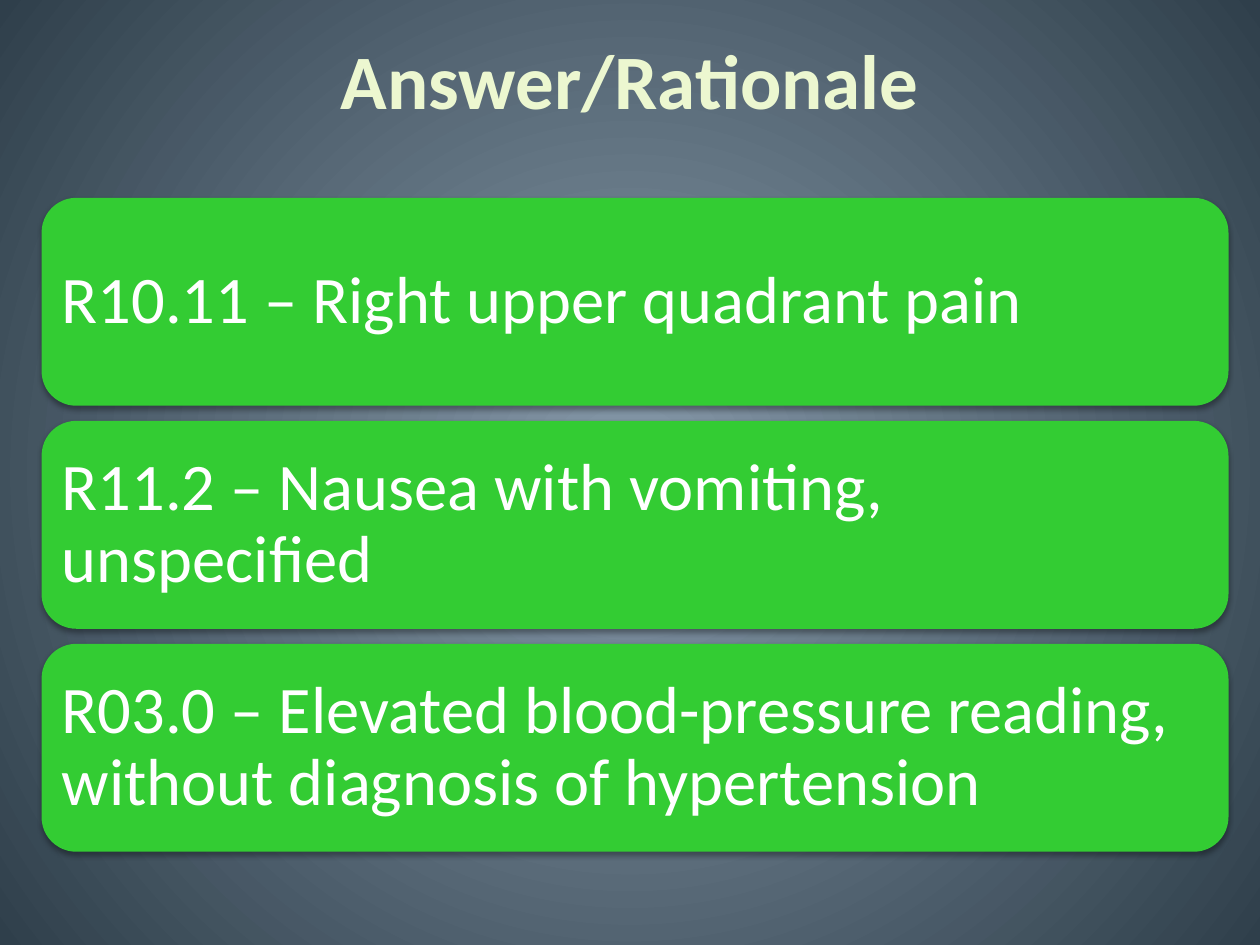
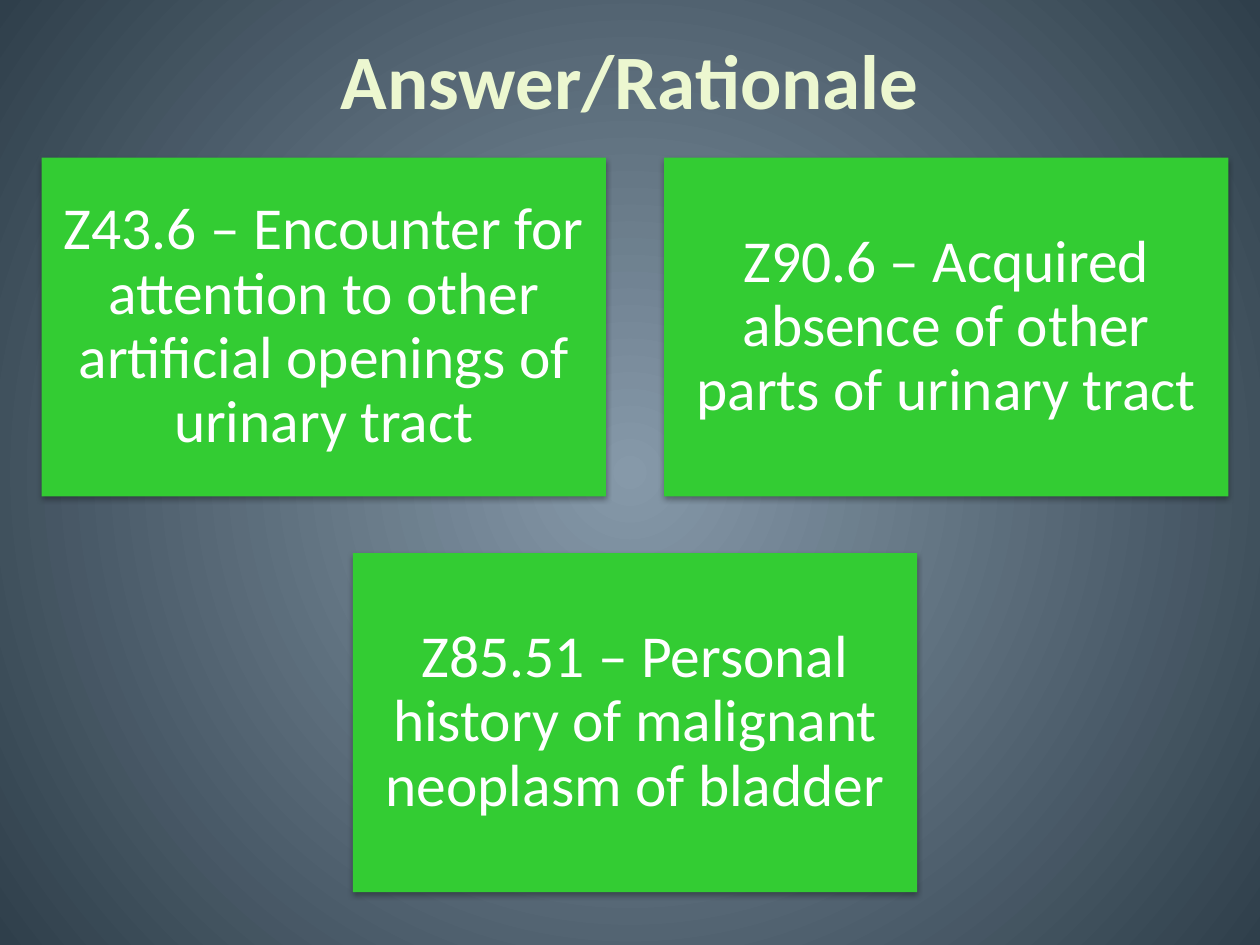
from lxml.etree import SubElement
from pptx import Presentation
from pptx.dml.color import RGBColor
from pptx.enum.shapes import MSO_SHAPE
from pptx.enum.text import MSO_ANCHOR, PP_ALIGN
from pptx.oxml import parse_xml
from pptx.oxml.ns import nsdecls, qn
from pptx.util import Inches, Pt

TITLE = "Answer/Rationale"
FONT = "Calibri"
COLORS = {
    "glow": "8699A9",
    "edge": "2F3F4B",
    "card": "33CC33",
    "card_text": "FFFFFF",
    "title": "ECF7D0",
}
AREA_LEFT, AREA_WIDTH = 0.33, 9.42

SYMPTOM_CODES = [
    "R10.11 – Right upper quadrant pain",
    "R11.2 – Nausea with vomiting, unspecified",
    "R03.0 – Elevated blood-pressure reading, without diagnosis of hypertension",
]
STATUS_CODE_ROWS = [
    [
        "Z43.6 – Encounter for attention to other artificial openings of urinary tract",
        "Z90.6 – Acquired absence of other parts of urinary tract",
    ],
    ["Z85.51 – Personal history of malignant neoplasm of bladder"],
]
SHADOW = (
    f'<a:effectLst {nsdecls("a")}>'
    '<a:outerShdw blurRad="39370" dist="22860" dir="5400000" rotWithShape="0">'
    '<a:srgbClr val="000000"><a:alpha val="35000"/></a:srgbClr>'
    "</a:outerShdw></a:effectLst>"
)


def color(name):
    return RGBColor.from_string(COLORS[name])


def apply_format(target, values):
    for name, value in values.items():
        setattr(target, name, value)


def set_background(master):
    fill = master.background.fill
    fill.gradient()
    for stop, name in zip(fill.gradient_stops, ("glow", "edge")):
        stop.color.rgb = color(name)
    gradient = master.element.find(f".//{qn('p:bgPr')}/{qn('a:gradFill')}")
    gradient.remove(gradient.find(qn("a:lin")))
    circle = SubElement(gradient, qn("a:path"), {"path": "circle"})
    center = dict.fromkeys("ltrb", "50000")
    SubElement(circle, qn("a:fillToRect"), center)


def write_text(shape, text, size, color_name, alignment, margin, spacing=1.0, bold=False):
    frame = shape.text_frame
    apply_format(frame, {"word_wrap": True, "vertical_anchor": MSO_ANCHOR.MIDDLE})
    sides = ("margin_left", "margin_top", "margin_right", "margin_bottom")
    apply_format(frame, dict.fromkeys(sides, Inches(margin)))
    paragraph = frame.paragraphs[0]
    apply_format(paragraph, {"alignment": alignment, "line_spacing": spacing})
    run = paragraph.add_run()
    run.text = text
    apply_format(run.font, {"name": FONT, "size": Pt(size), "bold": bold})
    run.font.color.rgb = color(color_name)


def add_title_slide(presentation):
    slide = presentation.slides.add_slide(presentation.slide_layouts[6])
    box = slide.shapes.add_textbox(Inches(0.5), Inches(0), Inches(9), Inches(1.25))
    write_text(box, TITLE, 44, "title", PP_ALIGN.CENTER, 0.1, bold=True)
    return slide


def add_card(slide, kind, left, top, width, height, text, size, alignment, margin):
    card = slide.shapes.add_shape(
        kind, Inches(left), Inches(top), Inches(width), Inches(height)
    )
    card.fill.solid()
    card.fill.fore_color.rgb = color("card")
    card.line.fill.background()
    card.shadow.inherit = False
    properties = card.element.spPr
    properties.replace(properties.find(qn("a:effectLst")), parse_xml(SHADOW))
    write_text(card, text, size, "card_text", alignment, margin, spacing=0.9)


def add_stacked_cards(slide, texts):
    top, height, gap = 1.57, 1.65, 0.12
    for index, text in enumerate(texts):
        add_card(
            slide, MSO_SHAPE.ROUNDED_RECTANGLE,
            AREA_LEFT, top + index * (height + gap), AREA_WIDTH, height,
            text, 38, PP_ALIGN.LEFT, 0.08,
        )


def add_centered_card_rows(slide, rows):
    top, width, height, gap = 1.25, 4.48, 2.69, 0.45
    column_gap = AREA_WIDTH - 2 * width
    for row_index, row in enumerate(rows):
        row_width = len(row) * (width + column_gap) - column_gap
        row_left = AREA_LEFT + (AREA_WIDTH - row_width) / 2
        for column, text in enumerate(row):
            add_card(
                slide, MSO_SHAPE.RECTANGLE,
                row_left + column * (width + column_gap),
                top + row_index * (height + gap), width, height,
                text, 34, PP_ALIGN.CENTER, 0.14,
            )


def main():
    presentation = Presentation()
    apply_format(
        presentation, {"slide_width": Inches(10), "slide_height": Inches(7.5)}
    )
    set_background(presentation.slide_master)
    add_stacked_cards(add_title_slide(presentation), SYMPTOM_CODES)
    add_centered_card_rows(add_title_slide(presentation), STATUS_CODE_ROWS)
    presentation.save("out.pptx")


if __name__ == "__main__":
    main()
